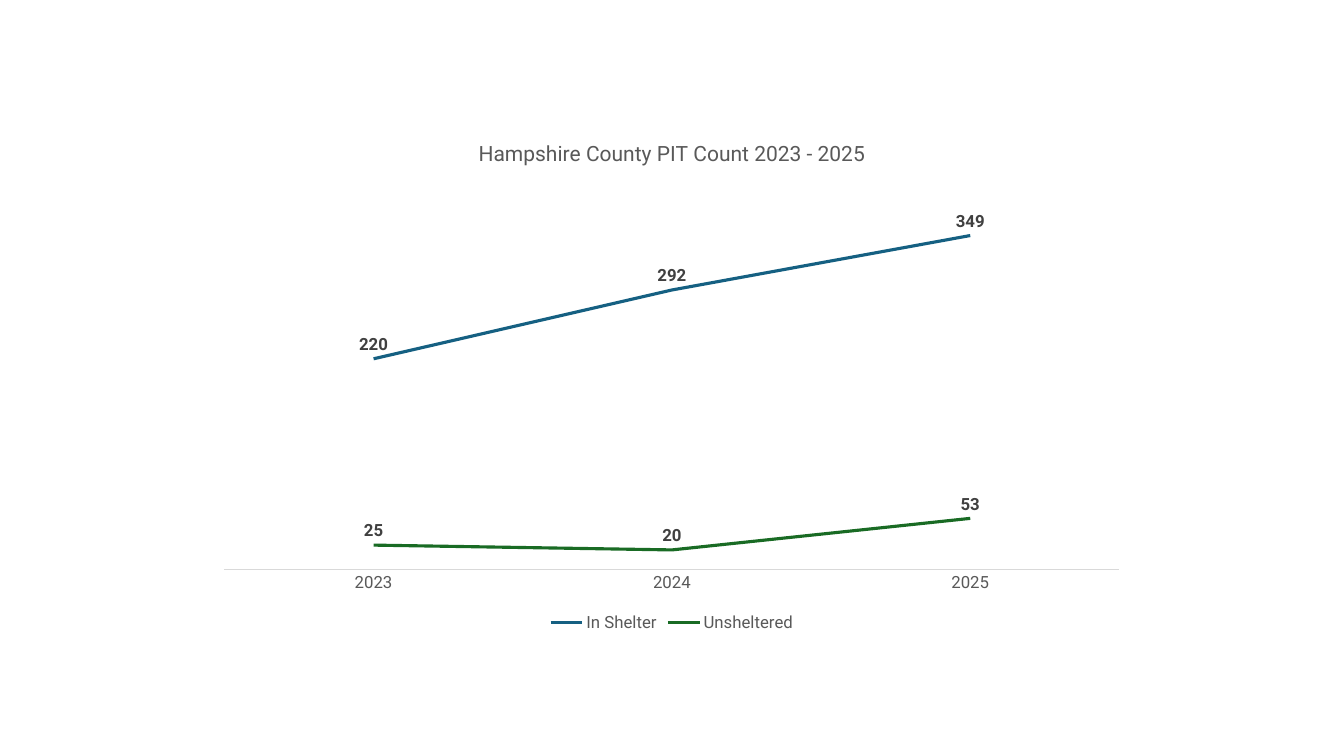
import dataclasses

import pptx
import pptx.chart.data
import pptx.dml.color
import pptx.enum.chart
import pptx.oxml
import pptx.oxml.ns
import pptx.util

PX = 9525  # EMU in one px, for a slide 1280 px wide


@dataclasses.dataclass(frozen=True)
class Theme:
    font: str = "Roboto"
    shelter: str = "156082"
    unsheltered: str = "196B24"
    muted: str = "595959"
    label: str = "404040"
    axis: str = "D9D9D9"
    title_size: int = 15
    text_size: int = 12
    series_width: float = 2.25
    axis_width: float = 0.75


class SlideBuilder:
    def __init__(self, slide, theme):
        self.slide = slide
        self.theme = theme

    def style_font(self, font, size, color, bold=False):
        font.name = self.theme.font
        font.size = pptx.util.Pt(size)
        font.bold = bold
        font.color.rgb = pptx.dml.color.RGBColor.from_string(color)

    def style_line(self, line, color, width):
        line.color.rgb = pptx.dml.color.RGBColor.from_string(color)
        line.width = pptx.util.Pt(width)

    def line_chart(self, left, top, width, height, title, years, counts):
        """Add a line chart; counts maps each series name to its values and colour."""
        data = pptx.chart.data.CategoryChartData()
        data.categories = years
        for name, (values, _) in counts.items():
            data.add_series(name, values)
        bounds = [length * PX for length in (left, top, width, height)]
        chart = self.slide.shapes.add_chart(
            pptx.enum.chart.XL_CHART_TYPE.LINE, *bounds, data).chart
        self.style_font(chart.font, self.theme.text_size, self.theme.muted)
        self.chart_title(chart, title)
        self.chart_axes(chart)
        self.chart_legend(chart)
        chart.plots[0].vary_by_categories = False
        for series, (_, color) in zip(chart.plots[0].series, counts.values()):
            self.chart_series(series, color)
        return chart

    def chart_title(self, chart, title):
        chart.has_title = True
        para = chart.chart_title.text_frame.paragraphs[0]
        span = para.add_run()
        span.text = title
        self.style_font(span.font, self.theme.title_size, self.theme.muted)
        chart.chart_title.include_in_layout = False

    def chart_axes(self, chart):
        no_tick = pptx.enum.chart.XL_TICK_MARK.NONE
        years = chart.category_axis
        years.major_tick_mark = years.minor_tick_mark = no_tick
        self.style_line(years.format.line, self.theme.axis, self.theme.axis_width)
        self.style_font(years.tick_labels.font, self.theme.text_size, self.theme.muted)
        people = chart.value_axis
        people.minimum_scale, people.maximum_scale = 0, 400
        people.has_major_gridlines = False
        people.visible = False

    def chart_legend(self, chart):
        chart.has_legend = True
        chart.legend.position = pptx.enum.chart.XL_LEGEND_POSITION.BOTTOM
        chart.legend.include_in_layout = False
        self.style_font(chart.legend.font, self.theme.text_size, self.theme.muted)

    def chart_series(self, series, color):
        series.smooth = False
        series.marker.style = pptx.enum.chart.XL_MARKER_STYLE.NONE
        self.style_line(series.format.line, color, self.theme.series_width)
        labels = series.data_labels
        labels.show_value = True
        labels.position = pptx.enum.chart.XL_LABEL_POSITION.ABOVE
        self.style_font(labels.font, self.theme.text_size, self.theme.label, bold=True)

    def place_plot(self, chart, x, y, w, h):
        """Fix the inner plot area, in fractions of the chart."""
        area = chart.plots[0]._element.getparent()
        for layout in area.findall(pptx.oxml.ns.qn("c:layout")):
            area.remove(layout)
        places = "".join(f'<c:{key} val="{value}"/>'
                         for key, value in (("x", x), ("y", y), ("w", w), ("h", h)))
        area.insert(0, pptx.oxml.parse_xml(
            f'<c:layout {pptx.oxml.ns.nsdecls("c")}><c:manualLayout>'
            '<c:layoutTarget val="inner"/><c:xMode val="edge"/><c:yMode val="edge"/>'
            f'{places}</c:manualLayout></c:layout>'))


def main():
    deck = pptx.Presentation()
    deck.slide_width, deck.slide_height = 1280 * PX, 720 * PX
    theme = Theme()
    builder = SlideBuilder(deck.slides.add_slide(deck.slide_layouts[6]), theme)
    chart = builder.line_chart(
        196, 114, 888, 492,
        "Hampshire County PIT Count 2023 - 2025",
        ["2023", "2024", "2025"],
        {"In Shelter": ([220, 292, 349], theme.shelter),
         "Unsheltered": ([25, 20, 53], theme.unsheltered)})
    builder.place_plot(chart, 0.02, 0.13, 0.96, 0.74)
    deck.save("out.pptx")


if __name__ == "__main__":
    main()
